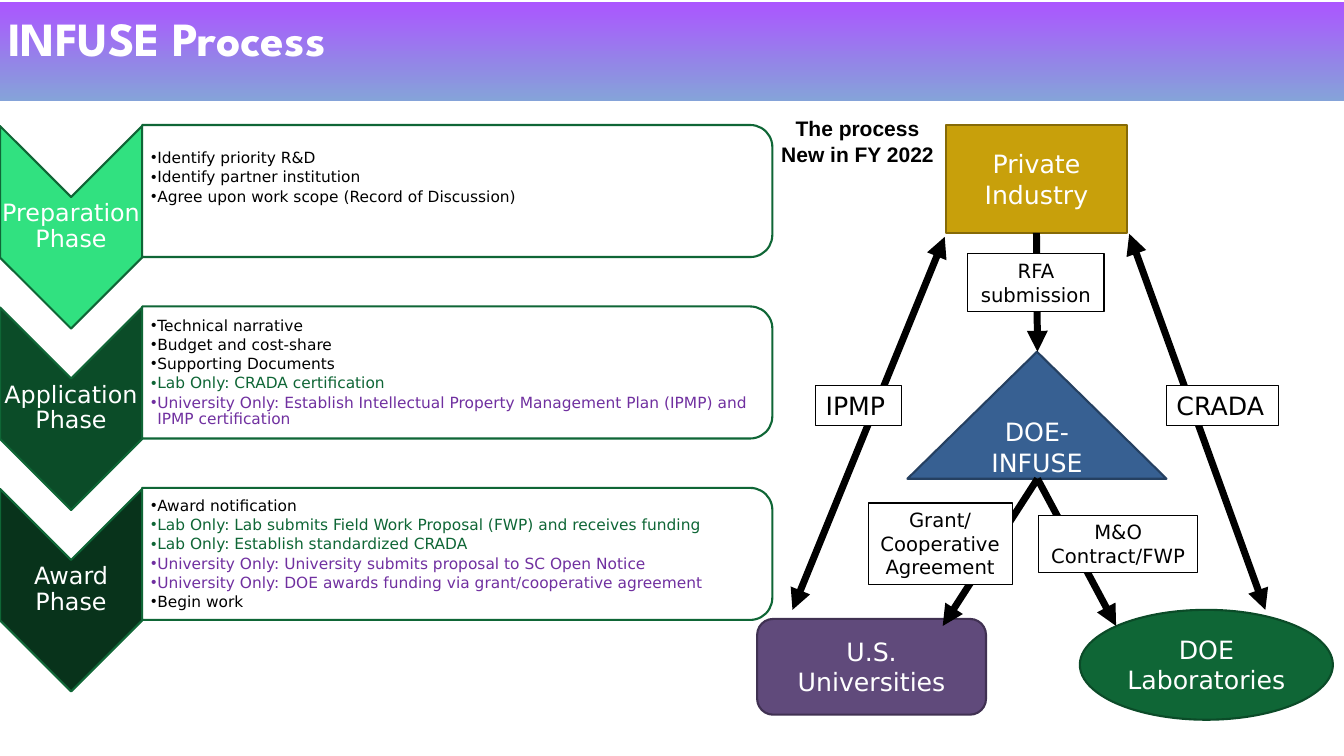
import pptx
import pptx.util
import pptx.oxml.ns
from lxml import etree
from pptx.dml.color import RGBColor
from pptx.enum.shapes import MSO_CONNECTOR, MSO_SHAPE
from pptx.enum.text import MSO_ANCHOR, MSO_AUTO_SIZE, PP_ALIGN

Inches, Pt, qn = pptx.util.Inches, pptx.util.Pt, pptx.oxml.ns.qn

WHITE = RGBColor(0xFF, 0xFF, 0xFF)
BLACK = RGBColor(0x00, 0x00, 0x00)
GREEN = RGBColor(0x0F, 0x66, 0x36)
DARK_GREEN = RGBColor(0x0B, 0x4B, 0x28)
PURPLE = RGBColor(0x70, 0x30, 0xA0)
BANNER_TOP = RGBColor(0xAB, 0x56, 0xFF)
BANNER_BOTTOM = RGBColor(0x85, 0xA3, 0xD9)
GOLD, GOLD_EDGE = RGBColor(0xC8, 0xA0, 0x0B), RGBColor(0x86, 0x6A, 0x07)
BLUE, BLUE_EDGE = RGBColor(0x37, 0x60, 0x92), RGBColor(0x25, 0x40, 0x61)
PLUM, PLUM_EDGE = RGBColor(0x60, 0x4A, 0x7B), RGBColor(0x40, 0x31, 0x52)
BODY_FONT = "DejaVu Sans"

TITLE = "INFUSE Process"
CAPTION = ["The process", "New in FY 2022"]

PHASES = [
    {"name": "Preparation\vPhase", "color": RGBColor(0x31, 0xE1, 0x80), "bottom": 0.28, "steps": [
        ("Identify priority R&D", BLACK),
        ("Identify partner institution", BLACK),
        ("Agree upon work scope (Record of Discussion)", BLACK)]},
    {"name": "Application\vPhase", "color": RGBColor(0x0B, 0x4C, 0x28), "bottom": 0.01, "steps": [
        ("Technical narrative", BLACK),
        ("Budget and cost-share", BLACK),
        ("Supporting Documents", BLACK),
        ("Lab Only: CRADA certification", GREEN),
        ("University Only: Establish Intellectual Property Management Plan (IPMP) "
         "and IPMP certification", PURPLE)]},
    {"name": "Award\vPhase", "color": RGBColor(0x08, 0x33, 0x1B), "bottom": 0.01, "steps": [
        ("Award notification", BLACK),
        ("Lab Only: Lab submits Field Work Proposal (FWP) and receives funding", GREEN),
        ("Lab Only: Establish standardized CRADA", GREEN),
        ("University Only: University submits proposal to SC Open Notice", PURPLE),
        ("University Only: DOE awards funding via grant/cooperative agreement", PURPLE),
        ("Begin work", BLACK)]},
]
PHASE_PITCH = 1.8

PARTIES = [
    (MSO_SHAPE.RECTANGLE, (9.38, 1.24, 1.8, 1.07), ["Private Industry"], GOLD, GOLD_EDGE),
    (MSO_SHAPE.ISOSCELES_TRIANGLE, (9, 3.49, 2.57, 1.26), ["DOE-", "INFUSE"], BLUE, BLUE_EDGE),
    (MSO_SHAPE.OVAL, (10.71, 6.05, 2.51, 1.09), ["DOE Laboratories"], GREEN, DARK_GREEN),
    (MSO_SHAPE.ROUNDED_RECTANGLE, (7.51, 6.14, 2.27, 0.95), ["U.S. Universities"], PLUM, PLUM_EDGE),
]

ARROWS = [
    ((10.28, 2.31), (10.29, 3.49), ["tailEnd"]),
    ((10.29, 4.75), (11.07, 6.21), ["tailEnd"]),
    ((10.29, 4.75), (9.35, 6.21), ["tailEnd"]),
    ((11.2, 2.32), (12.55, 6.05), ["headEnd", "tailEnd"]),
    ((9.37, 2.35), (7.86, 6.05), ["headEnd", "tailEnd"]),
]

LABELS = [
    ((9.6, 2.52, 1.35, 0.57), ["RFA submission"], 14, PP_ALIGN.CENTER),
    ((10.3, 5.11, 1.58, 0.57), ["M&O", "Contract/FWP"], 14, PP_ALIGN.CENTER),
    ((8.61, 4.99, 1.43, 0.81), ["Grant/", "Cooperative", "Agreement"], 14, PP_ALIGN.CENTER),
    ((11.57, 3.82, 1.11, 0.4), ["CRADA"], 18, PP_ALIGN.LEFT),
    ((8.09, 3.82, 0.85, 0.4), ["IPMP"], 18, PP_ALIGN.LEFT),
]


def set_values(target, values):
    for name, value in values.items():
        setattr(target, name, value)


def place(shape, *frame):
    set_values(shape, dict(zip(("left", "top", "width", "height"), map(Inches, frame))))


def set_frame(shape, anchor, insets=(0.1, 0.05, 0.1, 0.05), wrap=True):
    sides = ("margin_left", "margin_top", "margin_right", "margin_bottom")
    set_values(shape.text_frame, {
        "auto_size": MSO_AUTO_SIZE.NONE, "word_wrap": wrap, "vertical_anchor": anchor,
        **dict(zip(sides, map(Inches, insets)))})


def write(shape, lines, size, color, font=BODY_FONT, bold=False, **paragraph_format):
    shape.text_frame.text = "\n".join(lines)
    for para in shape.text_frame.paragraphs:
        set_values(para, paragraph_format)
        for span in para.runs:
            set_values(span.font, {"name": font, "size": Pt(size), "bold": bold})
            span.font.color.rgb = color
        set_values(para.font, {"name": font, "size": Pt(size), "bold": bold})


def add_shape(kind, frame, fill, edge, width=1.5):
    shape = page.shapes.add_shape(kind, *map(Inches, frame))
    shape.shadow.inherit = False
    shape.fill.solid()
    shape.fill.fore_color.rgb = fill
    shape.line.color.rgb = edge
    shape.line.width = Pt(width)
    return shape


def add_arrow(start, end, heads):
    arrow = page.shapes.add_connector(MSO_CONNECTOR.STRAIGHT, *map(Inches, start + end))
    arrow.line.color.rgb = BLACK
    arrow.line.width = Pt(5)
    outline = arrow.line._get_or_add_ln()
    for head in heads:
        etree.SubElement(outline, qn("a:" + head), type="triangle")
    etree.SubElement(arrow.element.spPr, qn("a:effectLst"))


def write_steps(box, steps):
    box.text_frame.text = "\n".join(text for text, color in steps)
    for para, (text, color) in zip(box.text_frame.paragraphs, steps):
        properties = para._p.get_or_add_pPr()
        properties.set("marL", str(Inches(0.06)))
        properties.set("indent", str(Inches(-0.06)))
        etree.SubElement(properties, qn("a:buChar"), char="•")
        set_values(para, {"level": 1, "alignment": PP_ALIGN.LEFT, "line_spacing": 0.9,
                          "space_before": Pt(0), "space_after": Pt(1.9)})
        set_values(para.runs[0].font, {"name": BODY_FONT, "size": Pt(11), "bold": False})
        para.runs[0].font.color.rgb = color


def add_phase(row, phase, body):
    shift = row * PHASE_PITCH
    chevron = add_shape(MSO_SHAPE.CHEVRON, (-0.3, 1.55 + shift, 2.01, 1.41), phase["color"], GREEN)
    chevron.rotation = 90

    name = page.shapes.add_textbox(*map(Inches, (0, 1.95 + shift, 1.41, 0.6)))
    set_frame(name, MSO_ANCHOR.MIDDLE, (0.01,) * 4)
    write(name, [phase["name"]], 17, WHITE, alignment=PP_ALIGN.CENTER, line_spacing=0.9)

    panel = add_shape(MSO_SHAPE.ROUND_2_SAME_RECTANGLE, (3.88, -1.23 + shift, 1.31, 6.25), WHITE, GREEN)
    panel.rotation = 90
    fill_color = panel.element.spPr.find(qn("a:solidFill")).find(qn("a:srgbClr"))
    etree.SubElement(fill_color, qn("a:alpha"), val="90000")

    place(body, 1.41, 1.31 + shift, 6.19, 1.18)
    set_frame(body, MSO_ANCHOR.MIDDLE, (0.09, 0.01, 0.01, phase["bottom"]))
    write_steps(body, phase["steps"])
    body.element.getparent().append(body.element)


deck = pptx.Presentation()
set_values(deck, {"slide_width": Inches(13.33), "slide_height": Inches(7.5)})
page = deck.slides.add_slide(deck.slide_layouts.get_by_name("Comparison"))
banner, *bodies, spare = page.placeholders

place(banner, -0.05, 0.02, 13.47, 0.98)
banner.fill.gradient()
banner.fill.gradient_angle = 270
for stop, color in zip(banner.fill.gradient_stops, (BANNER_TOP, BANNER_BOTTOM)):
    stop.color.rgb = color
set_frame(banner, MSO_ANCHOR.TOP, (0.13,) * 4)
write(banner, [TITLE], 34, WHITE, "League Spartan", True, alignment=PP_ALIGN.LEFT, line_spacing=0.9)
spare.element.getparent().remove(spare.element)

caption = page.shapes.add_textbox(*map(Inches, (7.71, 1.12, 1.59, 0.56)))
set_frame(caption, MSO_ANCHOR.MIDDLE, (0.03,) * 4, False)
write(caption, CAPTION, 15, BLACK, "Arial", True, alignment=PP_ALIGN.CENTER)

for kind, frame, lines, fill, edge in PARTIES:
    party = add_shape(kind, frame, fill, edge)
    set_frame(party, MSO_ANCHOR.MIDDLE)
    write(party, lines, 18, WHITE, alignment=PP_ALIGN.CENTER)

for arrow in ARROWS:
    add_arrow(*arrow)

for frame, lines, size, alignment in LABELS:
    label = add_shape(MSO_SHAPE.RECTANGLE, frame, WHITE, BLACK, 0.75)
    set_frame(label, MSO_ANCHOR.TOP)
    write(label, lines, size, BLACK, alignment=alignment)

for row, (phase, body) in enumerate(zip(PHASES, bodies)):
    add_phase(row, phase, body)

deck.save("out.pptx")
